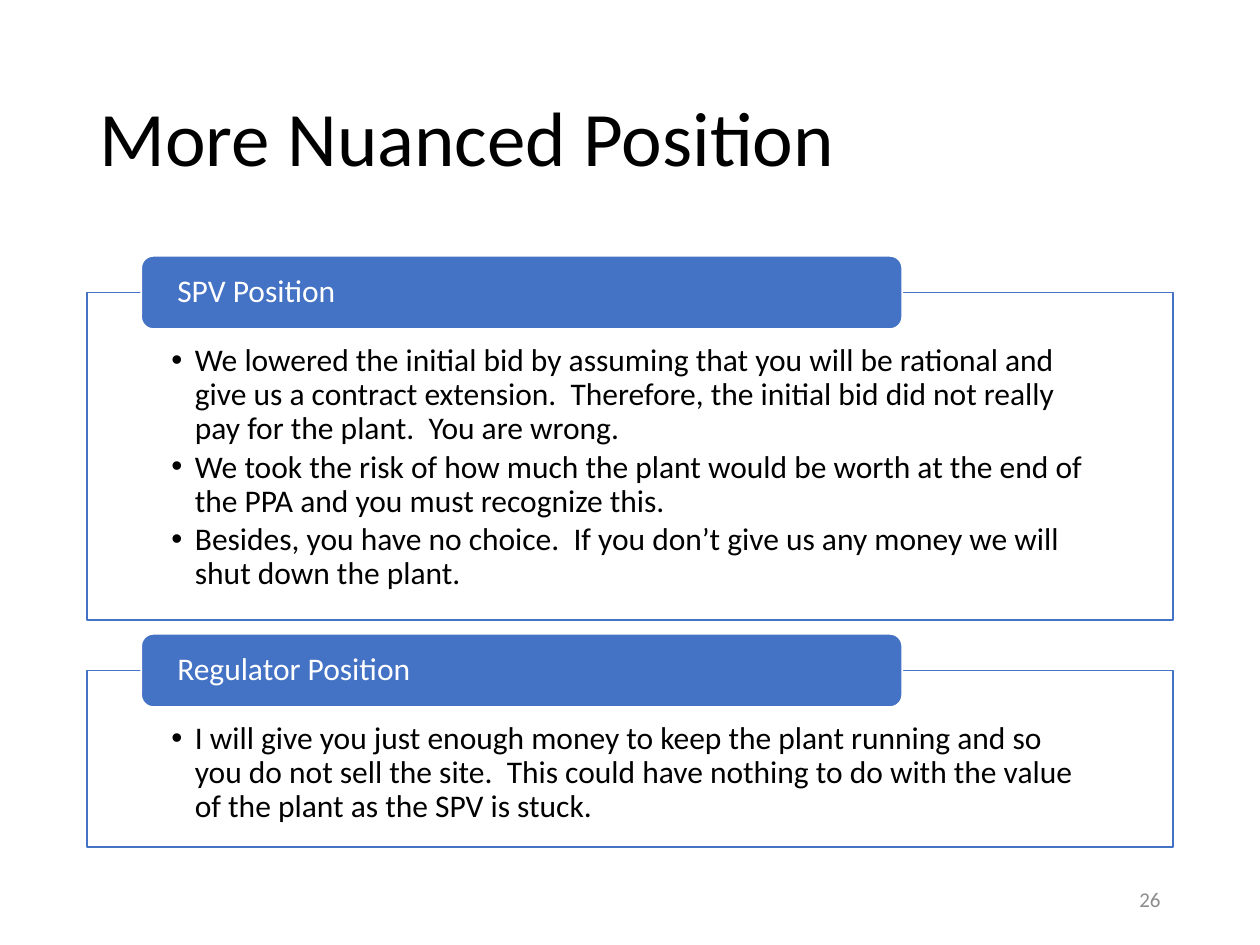
from lxml import etree
from pptx import Presentation
from pptx.dml.color import RGBColor
from pptx.enum import shapes, text
from pptx.oxml import ns
from pptx.util import Pt

COLORS = {"blue": "4472C4", "white": "FFFFFF", "black": "000000", "gray": "8C8C8C"}
FONT = "Calibri"
LEFT, WIDTH = 49.7, 620.6
TAB_INDENT, TAB_WIDTH, TAB_HEIGHT = 31, 434.9, 41.8
BULLET_INDENT = 13.5

# Header, box (left, top, width, height) including the tab, bullet points
PANELS = [
    ("SPV Position", (LEFT, 146.2, WIDTH, 208), [
        "We lowered the initial bid by assuming that you will be rational and give us "
        "a contract extension.  Therefore, the initial bid did not really pay for the "
        "plant.  You are wrong.",
        "We took the risk of how much the plant would be worth at the end of the PPA "
        "and you must recognize this.",
        "Besides, you have no choice.  If you don’t give us any money we will shut "
        "down the plant.",
    ]),
    ("Regulator Position", (LEFT, 362.2, WIDTH, 121.7), [
        "I will give you just enough money to keep the plant running and so you do not "
        "sell the site.  This could have nothing to do with the value of the plant as "
        "the SPV is stuck.",
    ]),
]


def color(name):
    return RGBColor.from_string(COLORS[name])


def place(shape, left, top, width, height):
    shape.left, shape.top = Pt(left), Pt(top)
    shape.width, shape.height = Pt(width), Pt(height)


def paint(shape, fill, line):
    shape.fill.solid()
    shape.fill.fore_color.rgb = color(fill)
    shape.line.color.rgb = color(line)
    shape.line.width = Pt(1)


def set_frame(frame, anchor, margins=(7.2, 3.6, 7.2, 3.6)):
    frame.word_wrap = True
    frame.auto_size = text.MSO_AUTO_SIZE.NONE
    frame.vertical_anchor = anchor
    (frame.margin_left, frame.margin_top,
     frame.margin_right, frame.margin_bottom) = map(Pt, margins)


def write(paragraph, words, size, color_name, align=text.PP_ALIGN.LEFT, after=0):
    paragraph.alignment = align
    paragraph.line_spacing = 0.9
    paragraph.space_before, paragraph.space_after = Pt(0), Pt(after)
    run = paragraph.add_run()
    run.text = words
    run.font.name, run.font.size = FONT, Pt(size)
    run.font.color.rgb = color(color_name)


def add_bullet(paragraph):
    properties = paragraph._p.get_or_add_pPr()
    properties.set("marL", str(Pt(BULLET_INDENT)))
    properties.set("indent", str(-Pt(BULLET_INDENT)))
    etree.SubElement(properties, ns.qn("a:buChar")).set("char", "•")


def build_title(shape, box, words):
    place(shape, *box)
    set_frame(shape.text_frame, text.MSO_ANCHOR.MIDDLE)
    write(shape.text_frame.paragraphs[0], words, 44, "black")


def build_panel(slide, body, box, header, points):
    left, top, width, height = box
    # Outlined list, starting halfway down the tab
    place(body, left, top + TAB_HEIGHT / 2, width, height - TAB_HEIGHT / 2)
    paint(body, "white", "blue")
    frame = body.text_frame
    set_frame(frame, text.MSO_ANCHOR.TOP, (48.2, 29.5, 48.2, 10))
    for index, point in enumerate(points):
        paragraph = frame.add_paragraph() if index else frame.paragraphs[0]
        paragraph.level = 1
        add_bullet(paragraph)
        write(paragraph, point, 18, "black", after=2.7)

    # Header tab
    tab = slide.shapes.add_shape(
        shapes.MSO_SHAPE.ROUNDED_RECTANGLE,
        Pt(left + TAB_INDENT), Pt(top), Pt(TAB_WIDTH), Pt(TAB_HEIGHT))
    tab.shadow.inherit = False
    paint(tab, "blue", "white")
    set_frame(tab.text_frame, text.MSO_ANCHOR.MIDDLE, (18.6, 0, 18.6, 0))
    write(tab.text_frame.paragraphs[0], header, 18, "white")


def build_page_number(slide, box, number):
    shape = slide.shapes.add_textbox(*map(Pt, box))
    set_frame(shape.text_frame, text.MSO_ANCHOR.MIDDLE)
    write(shape.text_frame.paragraphs[0], number, 12, "gray", text.PP_ALIGN.RIGHT)


def main():
    presentation = Presentation()
    presentation.slide_width, presentation.slide_height = Pt(720), Pt(540)
    # "Two Content" layout: a title and two lists
    slide = presentation.slides.add_slide(presentation.slide_layouts[3])
    title, *bodies = slide.placeholders
    build_title(title, (LEFT, 28.8, WIDTH, 104.4), "More Nuanced Position")
    for body, (header, box, points) in zip(bodies, PANELS):
        build_panel(slide, body, box, header, points)
    build_page_number(slide, (508.3, 500.4, 162, 28.8), "26")
    presentation.save("out.pptx")


if __name__ == "__main__":
    main()
